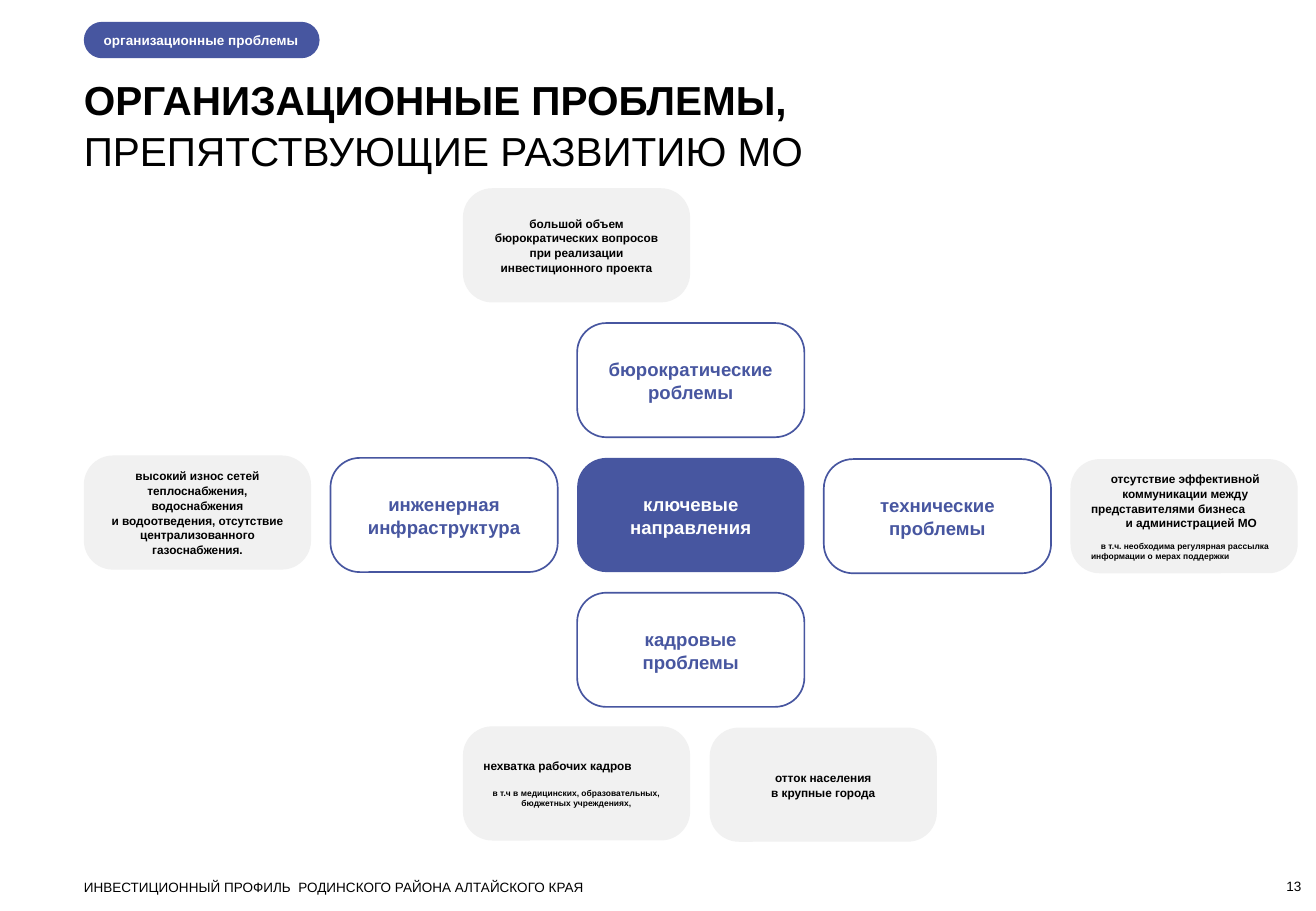
from dataclasses import dataclass

from pptx import Presentation
from pptx.dml.color import RGBColor
from pptx.enum.shapes import MSO_SHAPE
from pptx.enum.text import MSO_ANCHOR, PP_ALIGN
from pptx.shapes.autoshape import Shape
from pptx.slide import Slide
from pptx.util import Inches, Pt

ROUNDED = MSO_SHAPE.ROUNDED_RECTANGLE
LEFT, CENTER, RIGHT = PP_ALIGN.LEFT, PP_ALIGN.CENTER, PP_ALIGN.RIGHT
TOP, MIDDLE, BOTTOM = MSO_ANCHOR.TOP, MSO_ANCHOR.MIDDLE, MSO_ANCHOR.BOTTOM

FONT = "Arial"
BLUE, GREY, WHITE, BLACK = "4756A0", "F1F1F1", "FFFFFF", "000000"
LINE_SPACING = 1.05

# Grid of cards: five columns and five rows, plus a shifted pair of columns
MARGIN, GRID_TOP = 0.69, 1.55
COLUMN_STEP, ROW_STEP = 2.03, 1.11
CARD_WIDTH, CARD_HEIGHT = 1.87, 0.94
SHIFTED_COLUMN = (3.81 - MARGIN) / COLUMN_STEP
CARD_INSETS = (0.1, 0.05, 0.1, 0.05)
NO_INSETS = (0, 0, 0, 0)


@dataclass
class Line:
    text: str
    size: float
    bold: bool = True
    align: PP_ALIGN = CENTER
    space_before: float = 0
    indent: float = 0


@dataclass
class Card:
    column: float
    row: int
    lines: list[Line]
    fill: str | None = None
    outline: str | None = None
    color: str = BLACK
    nudge: float = 0
    insets: tuple[float, float, float, float] = CARD_INSETS


def rgb(value: str) -> RGBColor:
    return RGBColor.from_string(value)


def write(target: Shape, lines: list[Line], color: str, anchor: MSO_ANCHOR,
          insets: tuple[float, float, float, float]) -> None:
    frame = target.text_frame
    frame.word_wrap = True
    frame.vertical_anchor = anchor
    (frame.margin_left, frame.margin_top,
     frame.margin_right, frame.margin_bottom) = map(Inches, insets)
    for number, line in enumerate(lines):
        paragraph = frame.add_paragraph() if number else frame.paragraphs[0]
        paragraph.text = line.text
        paragraph.alignment = line.align
        paragraph.line_spacing = LINE_SPACING
        paragraph.space_before = Pt(line.space_before)
        if line.indent:
            paragraph._p.get_or_add_pPr().set("marL", str(Inches(line.indent)))
        paragraph.font.name = FONT
        paragraph.font.size = Pt(line.size)
        paragraph.font.bold = line.bold
        paragraph.font.color.rgb = rgb(color)


def add_label(slide: Slide, box: tuple[float, float, float, float],
              lines: list[Line], anchor: MSO_ANCHOR = TOP) -> None:
    label = slide.shapes.add_textbox(*map(Inches, box))
    write(label, lines, BLACK, anchor, NO_INSETS)


def add_rounded(slide: Slide, box: tuple[float, float, float, float],
                radius: float, fill: str | None, outline: str | None) -> Shape:
    rounded = slide.shapes.add_shape(ROUNDED, *map(Inches, box))
    rounded.adjustments[0] = radius
    rounded.shadow.inherit = False
    if fill:
        rounded.fill.solid()
        rounded.fill.fore_color.rgb = rgb(fill)
    else:
        rounded.fill.background()
    if outline:
        rounded.line.color.rgb = rgb(outline)
        rounded.line.width = Pt(1)
    else:
        rounded.line.fill.background()
    return rounded


def add_card(slide: Slide, card: Card) -> None:
    left = MARGIN + card.column * COLUMN_STEP
    top = GRID_TOP + card.row * ROW_STEP + card.nudge
    body = add_rounded(slide, (left, top, CARD_WIDTH, CARD_HEIGHT), 0.256,
                       card.fill, card.outline)
    write(body, card.lines, card.color, MIDDLE, card.insets)


def direction(column: float, row: int, text: str, nudge: float = 0) -> Card:
    return Card(column, row, [Line(text, 11)], outline=BLUE, color=BLUE, nudge=nudge)


CARDS = [
    # Centre and the four directions around it
    Card(2, 2, [Line("ключевые направления", 11)], fill=BLUE, color=WHITE),
    direction(2, 1, "бюрократические роблемы"),
    direction(1, 2, "инженерная инфраструктура"),
    direction(3, 2, "технические проблемы", nudge=0.01),
    direction(2, 3, "кадровые проблемы"),
    # Problems behind each direction
    Card(SHIFTED_COLUMN, 0, [
        Line("большой объем бюрократических вопросов при реализации "
             "инвестиционного проекта", 7),
    ], fill=GREY),
    Card(0, 2, [
        Line("высокий износ сетей теплоснабжения, водоснабжения", 7),
        Line("и водоотведения, отсутствие централизованного газоснабжения.", 7),
    ], fill=GREY, nudge=-0.02),
    Card(4, 2, [
        Line("отсутствие эффективной", 7),
        Line("коммуникации между", 7),
        Line("представителями бизнеса", 7, align=LEFT),
        Line("и администрацией МО", 7, indent=0.1),
        Line("в т.ч. необходима регулярная рассылка", 5, space_before=6),
        Line("информации о мерах поддержки", 5, align=LEFT),
    ], fill=GREY, nudge=0.01, insets=(0.1, 0.05, 0.08, 0.05)),
    Card(SHIFTED_COLUMN, 4, [
        Line("нехватка рабочих кадров", 7, align=LEFT),
        Line("в т.ч в медицинских, образовательных, бюджетных учреждениях,", 5,
             space_before=8.4),
    ], fill=GREY, nudge=-0.01),
    Card(SHIFTED_COLUMN + 1, 4, [
        Line("отток населения", 7),
        Line("в крупные города", 7),
    ], fill=GREY),
]


def main() -> None:
    presentation = Presentation()
    presentation.slide_width = Inches(10.83)
    presentation.slide_height = Inches(7.5)
    slide = presentation.slides.add_slide(presentation.slide_layouts[6])

    # Section tag and title
    tag = add_rounded(slide, (MARGIN, 0.18, 1.94, 0.3), 0.5, BLUE, None)
    write(tag, [Line("организационные проблемы", 8, align=LEFT)], WHITE, MIDDLE,
          (0.12, 0, 0, 0))
    add_label(slide, (MARGIN, 0.6, 10.02, 0.81), [
        Line("ОРГАНИЗАЦИОННЫЕ ПРОБЛЕМЫ,", 24, align=LEFT),
        Line("ПРЕПЯТСТВУЮЩИЕ РАЗВИТИЮ МО", 24, bold=False, align=LEFT),
    ])

    # Scheme of problems
    for card in CARDS:
        add_card(slide, card)

    # Footer
    add_label(slide, (MARGIN, 7.23, 8, 0.13), [
        Line("ИНВЕСТИЦИОННЫЙ ПРОФИЛЬ  РОДИНСКОГО РАЙОНА АЛТАЙСКОГО КРАЯ", 8,
             bold=False, align=LEFT),
    ])
    add_label(slide, (9.91, 7.23, 0.8, 0.13),
              [Line("13", 8, bold=False, align=RIGHT)], BOTTOM)

    presentation.save("out.pptx")


if __name__ == "__main__":
    main()
